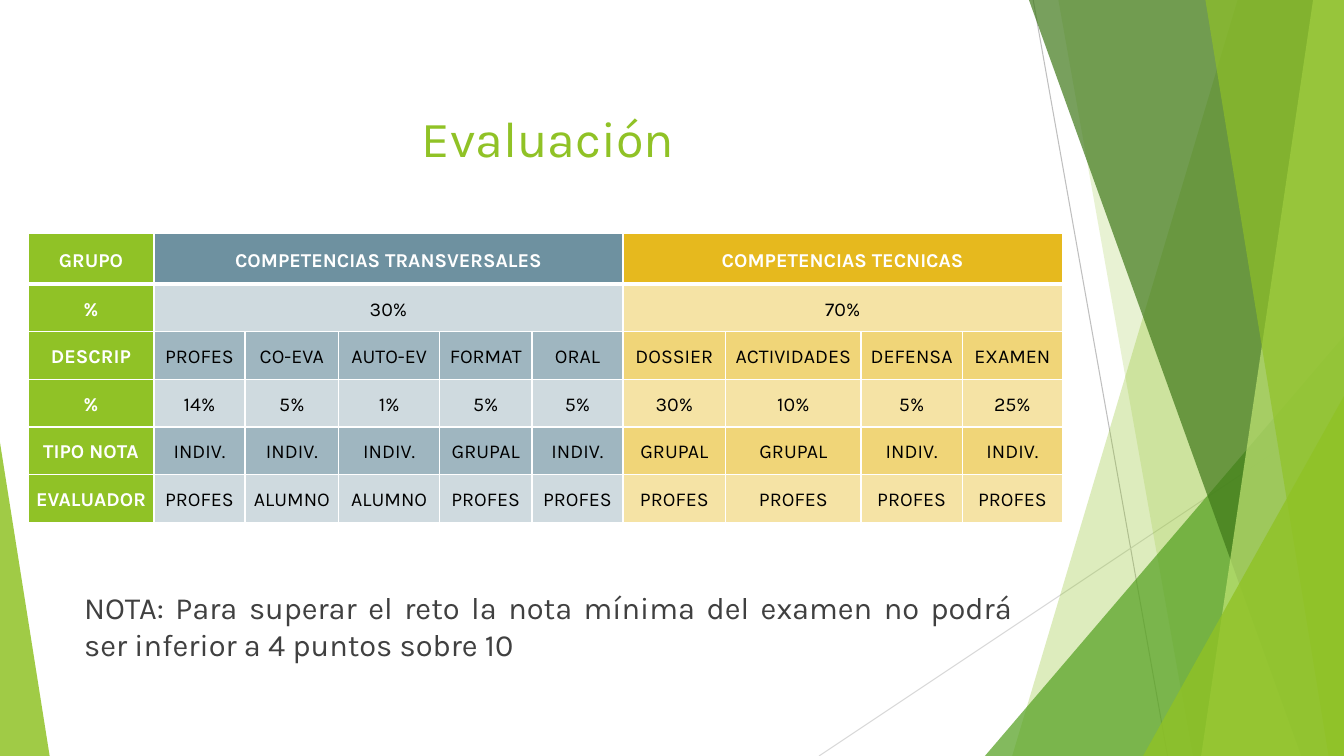
from lxml import etree
from pptx import Presentation
from pptx.dml.color import RGBColor
from pptx.enum.shapes import MSO_CONNECTOR, MSO_SHAPE
from pptx.enum.text import MSO_ANCHOR, PP_ALIGN
from pptx.oxml.ns import qn
from pptx.util import Pt

CENTER, JUSTIFY = PP_ALIGN.CENTER, PP_ALIGN.JUSTIFY
MIDDLE, TOP = MSO_ANCHOR.MIDDLE, MSO_ANCHOR.TOP
TRIANGLE, STRAIGHT = MSO_SHAPE.ISOSCELES_TRIANGLE, MSO_CONNECTOR.STRAIGHT

WHITE, BLACK = RGBColor(255, 255, 255), RGBColor(0, 0, 0)
GRAY = RGBColor(0x40, 0x40, 0x40)
RAY_GRAY, PALE_GRAY = RGBColor(0xBF, 0xBF, 0xBF), RGBColor(0xD9, 0xD9, 0xD9)
LIME, PALE_LIME = RGBColor(0x90, 0xC2, 0x26), RGBColor(0xC0, 0xE4, 0x74)
GREEN, DARK_GREEN = RGBColor(0x54, 0xA0, 0x21), RGBColor(0x3F, 0x78, 0x19)
BLUE, MID_BLUE, PALE_BLUE = (
    RGBColor(0x6E, 0x91, 0xA0), RGBColor(0x9F, 0xB6, 0xC0), RGBColor(0xCF, 0xDA, 0xDF))
GOLD, MID_GOLD, PALE_GOLD = (
    RGBColor(0xE6, 0xB9, 0x1E), RGBColor(0xF0, 0xD5, 0x78), RGBColor(0xF5, 0xE3, 0xA5))

WIDTH, HEIGHT = 960, 540

# Evaluation table: None continues the merged cell on its left
GRADES = [
    ["GRUPO", "COMPETENCIAS TRANSVERSALES", None, None, None, None,
     "COMPETENCIAS TECNICAS", None, None, None],
    ["%", "30%", None, None, None, None, "70%", None, None, None],
    ["DESCRIP", "PROFES", "CO-EVA", "AUTO-EV", "FORMAT", "ORAL",
     "DOSSIER", "ACTIVIDADES", "DEFENSA", "EXAMEN"],
    ["%", "14%", "5%", "1%", "5%", "5%", "30%", "10%", "5%", "25%"],
    ["TIPO NOTA", "INDIV.", "INDIV.", "INDIV.", "GRUPAL", "INDIV.",
     "GRUPAL", "GRUPAL", "INDIV.", "INDIV."],
    ["EVALUADOR", "PROFES", "ALUMNO", "ALUMNO", "PROFES", "PROFES",
     "PROFES", "PROFES", "PROFES", "PROFES"],
]
COLUMN_WIDTHS = [90, 65, 67, 72, 66, 65, 73.5, 96.5, 72.5, 71.5]
ROW_HEIGHTS = [36] + [34] * 5
FIRST_TECHNICAL = 6


def write(frame, text, size=14, color=BLACK, bold=False, align=CENTER,
          anchor=MIDDLE, line_spacing=1.0, space_before=0):
    frame.word_wrap = True
    frame.vertical_anchor = anchor
    paragraph = frame.paragraphs[0]
    paragraph.alignment = align
    paragraph.line_spacing = line_spacing
    paragraph.space_before = Pt(space_before)
    run = paragraph.add_run()
    run.text = text
    run.font.name = "Karla"
    run.font.size = Pt(size)
    run.font.bold = bold
    run.font.color.rgb = color


def cell_fill(row, column):
    if column == 0:
        return LIME
    strong, mid, pale = ((BLUE, MID_BLUE, PALE_BLUE) if column < FIRST_TECHNICAL
                         else (GOLD, MID_GOLD, PALE_GOLD))
    if row == 0:
        return strong
    return pale if row % 2 else mid


def set_borders(cell, top, bottom):
    properties = cell._tc.get_or_add_tcPr()
    sides = (("a:lnL", 1), ("a:lnR", 1), ("a:lnT", top), ("a:lnB", bottom))
    for position, (side, width) in enumerate(sides):
        line = etree.Element(qn(side), w=str(Pt(width)))
        fill = etree.SubElement(line, qn("a:solidFill"))
        etree.SubElement(fill, qn("a:srgbClr"), val=str(WHITE))
        properties.insert(position, line)


class Slide:
    def __init__(self, presentation):
        self.slide = presentation.slides.add_slide(presentation.slide_layouts[5])
        self.shapes = self.slide.shapes

    def ray(self, start, end, color):
        ray = self.shapes.add_connector(STRAIGHT, *map(Pt, start + end))
        ray.line.color.rgb = color
        ray.line.width = Pt(0.75)
        etree.SubElement(ray._element.spPr, qn("a:effectLst"))

    def paint(self, shape, color, opacity):
        shape.shadow.inherit = False
        shape.fill.solid()
        shape.fill.fore_color.rgb = color
        shape.line.fill.background()
        rgb = shape._element.spPr.find(".//" + qn("a:srgbClr"))
        etree.SubElement(rgb, qn("a:alpha"), val=str(opacity * 1000))

    def facet(self, top_x, bottom_x, color, opacity):
        """Band from a slanted left edge to the right side of the slide."""
        corners = [(WIDTH, 0), (WIDTH, HEIGHT), (bottom_x, HEIGHT)]
        outline = self.shapes.build_freeform(Pt(top_x), 0)
        outline.add_line_segments([(Pt(x), Pt(y)) for x, y in corners])
        self.paint(outline.convert_to_shape(), color, opacity)

    def corner(self, left, top, width, apex, color, opacity):
        """Triangle that stands on the bottom of the slide."""
        triangle = self.shapes.add_shape(
            TRIANGLE, Pt(left), Pt(top), Pt(width), Pt(HEIGHT - top))
        triangle.adjustments[0] = apex
        self.paint(triangle, color, opacity)

    def title(self, text, left, top, width, height, **style):
        title = self.shapes.title
        title.left, title.top = Pt(left), Pt(top)
        title.width, title.height = Pt(width), Pt(height)
        write(title.text_frame, text, **style)

    def note(self, text, left, top, width, height, **style):
        note = self.shapes.add_textbox(Pt(left), Pt(top), Pt(width), Pt(height))
        write(note.text_frame, text, **style)

    def table(self, rows, left, top, widths, heights):
        table = self.shapes.add_table(
            len(rows), len(widths), Pt(left), Pt(top),
            Pt(sum(widths)), Pt(sum(heights))).table
        table.first_row = table.horz_banding = False
        for column, width in zip(table.columns, widths):
            column.width = Pt(width)
        for r, (row, height) in enumerate(zip(rows, heights)):
            table.rows[r].height = Pt(height)
            for c, text in enumerate(row):
                self.cell(table.cell(r, c), text, r, c)
            starts = [c for c, text in enumerate(row) if text is not None]
            for start, end in zip(starts, starts[1:] + [len(row)]):
                if end - start > 1:
                    table.cell(r, start).merge(table.cell(r, end - 1))

    def cell(self, cell, text, row, column):
        cell.fill.solid()
        cell.fill.fore_color.rgb = cell_fill(row, column)
        set_borders(cell, top=3 if row == 1 else 1, bottom=3 if row == 0 else 1)
        cell.margin_left = cell.margin_right = Pt(5)
        cell.margin_top = cell.margin_bottom = 0
        cell.vertical_anchor = MIDDLE
        if text is not None:
            heading = row == 0 or column == 0
            write(cell.text_frame, text, bold=heading,
                  color=WHITE if heading else BLACK, line_spacing=1.15)


def main():
    presentation = Presentation()
    presentation.slide_width, presentation.slide_height = Pt(WIDTH), Pt(HEIGHT)
    slide = Slide(presentation)

    # Green facets
    slide.ray((738, 0), (834, HEIGHT), RAY_GRAY)
    slide.ray((WIDTH, 290), (585, HEIGHT), PALE_GRAY)
    slide.facet(884, 723, LIME, 30)
    slide.facet(756, 852, LIME, 20)
    slide.corner(703.5, 240, 256.5, 1, GREEN, 72)
    slide.facet(735, 929.5, DARK_GREEN, 70)
    slide.facet(938, 858, PALE_LIME, 70)
    slide.facet(861, 949, LIME, 65)
    slide.corner(816.5, 283, 143.5, 1, LIME, 80)
    slide.corner(0, 316, 35.5, 0, LIME, 85)

    # Title, grades and note
    slide.title("Evaluación", 53, 46, 677, 104, size=36, color=LIME)
    slide.table(GRADES, 20, 167, COLUMN_WIDTHS, ROW_HEIGHTS)
    slide.note("NOTA: Para superar el reto la nota mínima del examen no podrá "
               "ser inferior a 4 puntos sobre 10", 53, 417, 677, 111,
               size=22, color=GRAY, align=JUSTIFY, anchor=TOP, space_before=10)

    presentation.save("out.pptx")


if __name__ == "__main__":
    main()
